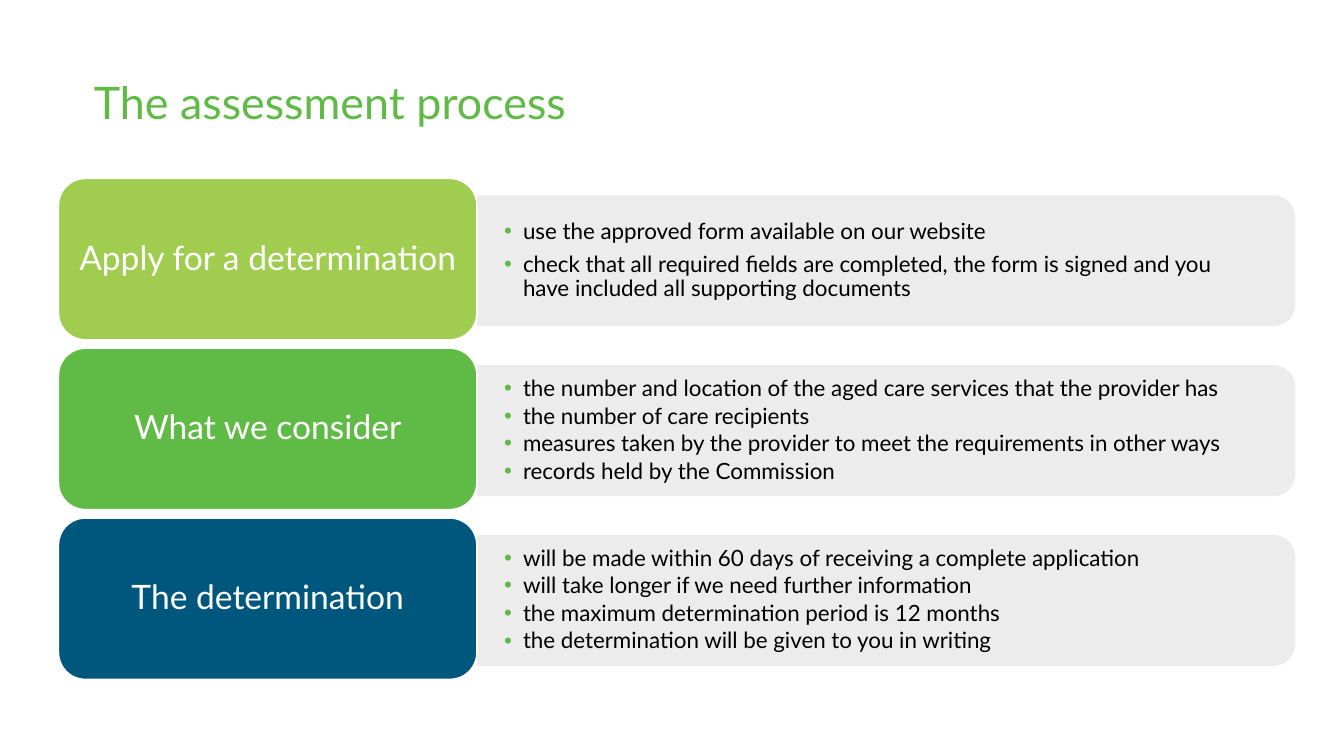
from dataclasses import dataclass

from lxml.etree import SubElement
from pptx import Presentation
from pptx.dml.color import RGBColor
from pptx.enum.shapes import MSO_SHAPE as SHAPE
from pptx.enum.text import MSO_ANCHOR as ANCHOR, PP_ALIGN as ALIGN
from pptx.oxml.ns import qn
from pptx.util import Pt


@dataclass(frozen=True)
class Theme:
    font: str = "Lato"
    title_size: float = 32
    label_size: float = 24
    body_size: float = 16
    green: str = "5FBB46"
    lime: str = "A0CD4F"
    navy: str = "00577D"
    grey: str = "EBEBEB"
    white: str = "FFFFFF"
    black: str = "000000"


THEME = Theme()

LEFT, TOP, PITCH = 41.8, 127.5, 121.3
LABEL_W, LABEL_H = 298.8, 115.2
PANEL_LEFT = LEFT + LABEL_W
PANEL_W, PANEL_H, PANEL_DROP = 584.6, 93.6, 12
BODY_W, BODY_H = 580.3, 84.2

STEPS = [
    ("Apply for a determination", THEME.lime, 6, [
        "use the approved form available on our website",
        "check that all required fields are completed, the form is signed "
        "and you have included all supporting documents",
    ]),
    ("What we consider", THEME.green, 2.4, [
        "the number and location of the aged care services that the provider has",
        "the number of care recipients",
        "measures taken by the provider to meet the requirements in other ways",
        "records held by the Commission",
    ]),
    ("The determination", THEME.navy, 2.4, [
        "will be made within 60 days of receiving a complete application",
        "will take longer if we need further information",
        "the maximum determination period is 12 months",
        "the determination will be given to you in writing",
    ]),
]


def rgb(color):
    return RGBColor.from_string(color)


def add_bullet(p, color, indent=13.5):
    pPr = p._p.get_or_add_pPr()
    pPr.set("marL", str(Pt(indent)))
    pPr.set("indent", str(-Pt(indent)))
    SubElement(SubElement(pPr, qn("a:buClr")), qn("a:srgbClr"), val=color)
    SubElement(pPr, qn("a:buFont"), typeface="Arial")
    SubElement(pPr, qn("a:buChar"), char="•")


def write(tf, *lines, size, color, align=ALIGN.LEFT, bullet=None, gap=0):
    """Fill a text frame with one paragraph per line, centred vertically."""
    tf.word_wrap = True
    tf.vertical_anchor = ANCHOR.MIDDLE
    for i, line in enumerate(lines):
        p = tf.add_paragraph() if i else tf.paragraphs[0]
        p.alignment = align
        p.line_spacing = 0.9
        p.space_after = Pt(gap)
        if bullet:
            add_bullet(p, bullet)
        r = p.add_run()
        r.text = line
        r.font.name = THEME.font
        r.font.size = Pt(size)
        r.font.color.rgb = rgb(color)


def add_text_box(s, x, y, w, h):
    return s.shapes.add_textbox(Pt(x), Pt(y), Pt(w), Pt(h)).text_frame


def add_filled(s, kind, x, y, w, h, fill):
    sp = s.shapes.add_shape(kind, Pt(x), Pt(y), Pt(w), Pt(h))
    sp.shadow.inherit = False
    sp.fill.solid()
    sp.fill.fore_color.rgb = rgb(fill)
    return sp


def add_panel(s, y):
    """Grey panel, turned so that its two rounded corners face right."""
    shift = (PANEL_W - PANEL_H) / 2
    sp = add_filled(s, SHAPE.ROUND_2_SAME_RECTANGLE, PANEL_LEFT + shift,
                    y - shift, PANEL_H, PANEL_W, THEME.grey)
    sp.rotation = 90
    sp.line.fill.background()
    color = sp._element.spPr.find(qn("a:solidFill")).find(qn("a:srgbClr"))
    SubElement(color, qn("a:alpha"), val="90000")


def add_label(s, y, text, fill):
    sp = add_filled(s, SHAPE.ROUNDED_RECTANGLE, LEFT, y, LABEL_W, LABEL_H, fill)
    sp.line.color.rgb = rgb(THEME.white)
    sp.line.width = Pt(1)
    write(sp.text_frame, text, size=THEME.label_size, color=THEME.white,
          align=ALIGN.CENTER)


def add_body(s, y, points, gap):
    tf = add_text_box(s, PANEL_LEFT, y, BODY_W, BODY_H)
    tf.margin_left = tf.margin_right = Pt(19.5)
    tf.margin_top = tf.margin_bottom = Pt(9.75)
    write(tf, *points, size=THEME.body_size, color=THEME.black,
          bullet=THEME.green, gap=gap)


def add_step(s, y, label, fill, gap, points):
    panel_y = y + PANEL_DROP
    add_panel(s, panel_y)
    add_body(s, panel_y + (PANEL_H - BODY_H) / 2, points, gap)
    add_label(s, y, label, fill)


def main():
    prs = Presentation()
    prs.slide_width, prs.slide_height = Pt(960), Pt(540)
    s = prs.slides.add_slide(prs.slide_layouts[6])
    write(add_text_box(s, 60, 54, 731.5, 42.5), "The assessment process",
          size=THEME.title_size, color=THEME.green)
    for i, step in enumerate(STEPS):
        add_step(s, TOP + i * PITCH, *step)
    prs.save("out.pptx")


if __name__ == "__main__":
    main()
